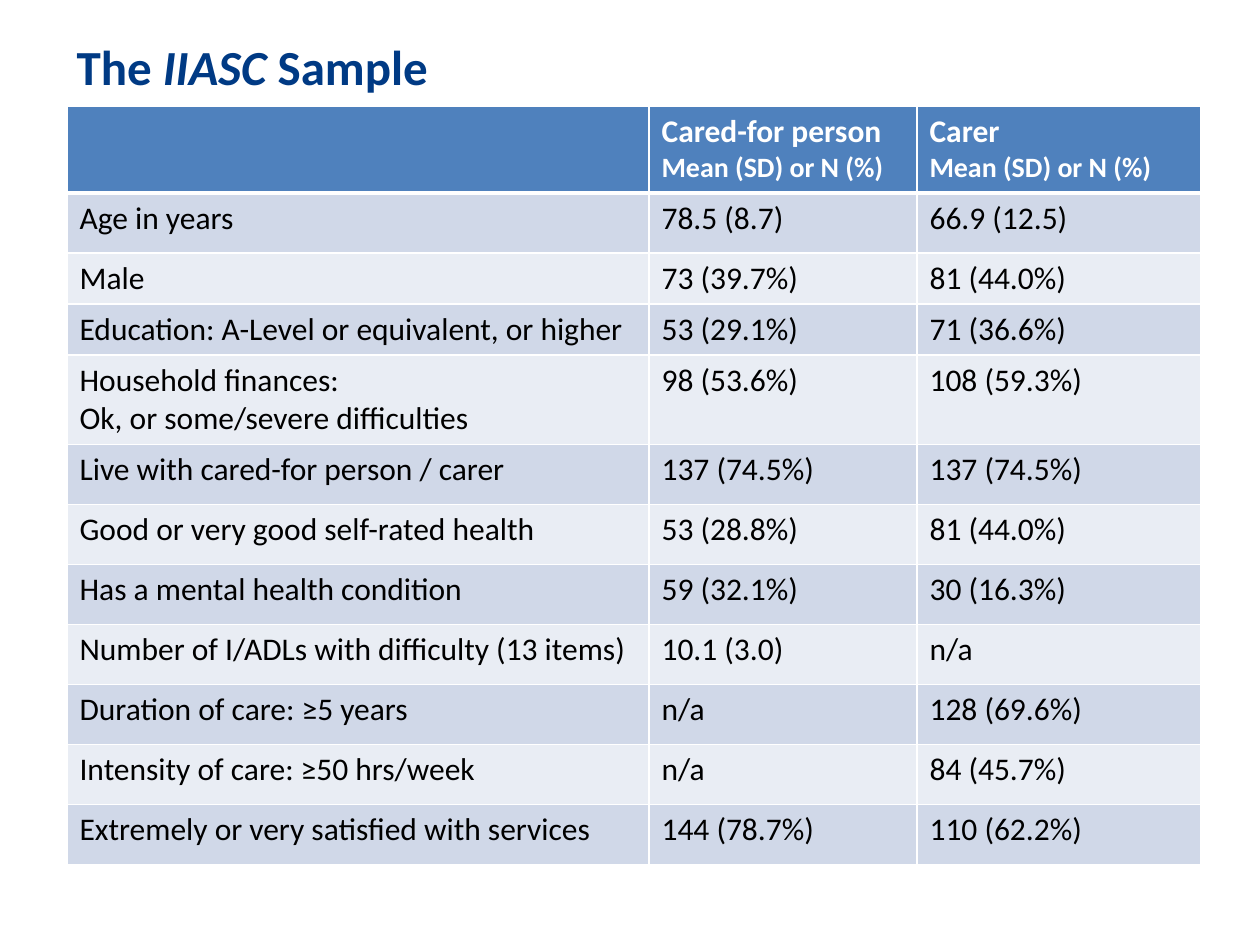
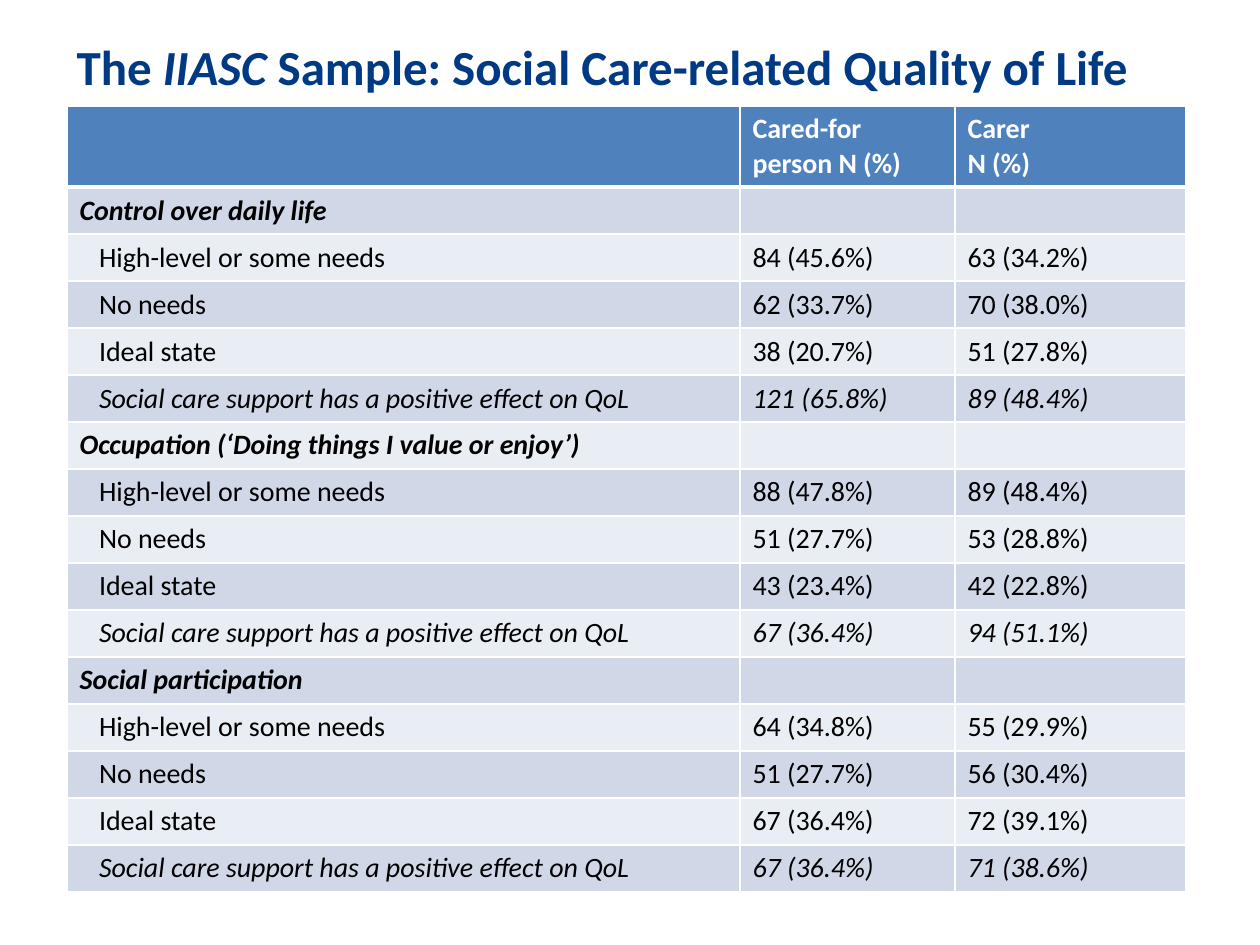
from dataclasses import dataclass
from itertools import chain

from lxml.etree import SubElement
from pptx import Presentation
from pptx.dml.color import RGBColor as Rgb
from pptx.enum.text import MSO_ANCHOR as Anchor, MSO_AUTO_SIZE as AutoSize, PP_ALIGN as Align
from pptx.oxml.ns import qn
from pptx.util import Emu, Pt

PX_PER_INCH = 126
EMU_PER_INCH = 914400
EMU_PER_POINT = 12700


@dataclass(frozen=True)
class Theme:
    font: str = "Calibri"
    title: str = "003A84"
    header: str = "4F81BD"
    bands: tuple[str, str] = ("D0D8E8", "E9EDF4")
    border: str = "FFFFFF"
    header_text: str = "FFFFFF"
    body_text: str = "000000"
    title_size: int = 28
    large: int = 18
    small: int = 16
    thin_line: int = 1
    header_line: int = 3


THEME = Theme()


@dataclass(frozen=True)
class Span:
    text: str
    size: int | None = None
    italic: bool | None = None


Line = tuple[Span, ...]


@dataclass(frozen=True)
class Row:
    cells: tuple[str | tuple[Line, ...], ...]
    height: int
    bold: bool = False
    italic: bool = False
    indent: int = 0


@dataclass(frozen=True)
class TableSlide:
    title: Line
    columns: tuple[int, ...]
    rows: tuple[Row, ...]
    text_size: int


@dataclass(frozen=True)
class Domain:
    """One quality-of-life domain: (cared-for person, carer) for each answer."""
    name: str
    values: tuple[tuple[str, str], ...]


ANSWERS = ("High-level or some needs", "No needs", "Ideal state")
SUPPORT_EFFECT = "Social care support has a positive effect on QoL"
DOMAIN_ROW_HEIGHT = 47
ANSWER_INDENT = 19
CELL_MARGIN = 13
TITLE_BOX = (64, 16, 1134, 100)
TABLE_LEFT, TABLE_TOP = 67, 106

UNITS = Span("Mean (SD) or N (%)", THEME.small)
SAMPLE = TableSlide(
    title=(Span("The "), Span("IIASC ", italic=True), Span("Sample")),
    columns=(582, 268, 284),
    text_size=THEME.large,
    rows=(
        Row(("", ((Span("Cared-for person "), UNITS),), ((Span("Carer"),), (UNITS,))),
            87, bold=True),
        Row(("Age in years", "78.5 (8.7)", "66.9 (12.5)"), 60),
        Row(("Male", "73 (39.7%)", "81 (44.0%)"), 51),
        Row(("Education: A-Level or equivalent, or higher", "53 (29.1%)", "71 (36.6%)"), 51),
        Row((((Span("Household finances:"),), (Span("Ok, or some/severe difficulties"),)),
             "98 (53.6%)", "108 (59.3%)"), 89),
        Row(("Live with cared-for person / carer", "137 (74.5%)", "137 (74.5%)"), 60),
        Row(("Good or very good self-rated health", "53 (28.8%)", "81 (44.0%)"), 60),
        Row(("Has a mental health condition", "59 (32.1%)", "30 (16.3%)"), 60),
        Row(("Number of I/ADLs with difficulty (13 items)", "10.1 (3.0)", "n/a"), 60),
        Row(("Duration of care: ≥5 years", "n/a", "128 (69.6%)"), 60),
        Row(("Intensity of care: ≥50 hrs/week", "n/a", "84 (45.7%)"), 60),
        Row(("Extremely or very satisfied with services", "144 (78.7%)", "110 (62.2%)"), 60),
    ),
)

DOMAINS = (
    Domain("Control over daily life", (
        ("84 (45.6%)", "63 (34.2%)"), ("62 (33.7%)", "70 (38.0%)"),
        ("38 (20.7%)", "51 (27.8%)"), ("121 (65.8%)", "89 (48.4%)"))),
    Domain("Occupation (‘Doing things I value or enjoy’)", (
        ("88 (47.8%)", "89 (48.4%)"), ("51 (27.7%)", "53 (28.8%)"),
        ("43 (23.4%)", "42 (22.8%)"), ("67 (36.4%)", "94 (51.1%)"))),
    Domain("Social participation", (
        ("64 (34.8%)", "55 (29.9%)"), ("51 (27.7%)", "56 (30.4%)"),
        ("67 (36.4%)", "72 (39.1%)"), ("67 (36.4%)", "71 (38.6%)"))),
)


def domain_rows(domain: Domain) -> list[Row]:
    heading = Row((domain.name, "", ""), DOMAIN_ROW_HEIGHT, bold=True, italic=True)
    answers = [
        Row((label, *values), DOMAIN_ROW_HEIGHT,
            italic=label == SUPPORT_EFFECT, indent=ANSWER_INDENT)
        for label, values in zip((*ANSWERS, SUPPORT_EFFECT), domain.values)
    ]
    return [heading, *answers]


QUALITY_OF_LIFE = TableSlide(
    title=(Span("The "), Span("IIASC ", italic=True),
           Span("Sample: Social Care-related Quality of Life")),
    columns=(673, 215, 231),
    text_size=THEME.small,
    rows=(
        Row(("", "Cared-for person N (%)", ((Span("Carer"),), (Span("N (%)"),))),
            79, bold=True),
        *chain.from_iterable(map(domain_rows, DOMAINS)),
    ),
)


def px(length: int) -> Emu:
    return Emu(round(length * EMU_PER_INCH / PX_PER_INCH))


def write_line(para, line: Line, size: int, color: str, bold: bool, italic: bool = False) -> None:
    font = para.font
    font.name, font.size, font.bold, font.italic = THEME.font, Pt(size), bold, italic
    font.color.rgb = Rgb.from_string(color)
    for span in line:
        run = para.add_run()
        run.text = span.text
        if span.size:
            run.font.size = Pt(span.size)
        if span.italic is not None:
            run.font.italic = span.italic
    if not line:
        SubElement(para._p, qn("a:endParaRPr"), sz=str(size * 100))


def add_title(page, line: Line) -> None:
    title = page.shapes.title
    title.left, title.top, title.width, title.height = map(px, TITLE_BOX)
    frame = title.text_frame
    frame.word_wrap = True
    frame.auto_size = AutoSize.NONE
    frame.vertical_anchor = Anchor.MIDDLE
    para = frame.paragraphs[0]
    para.alignment = Align.LEFT
    write_line(para, line, THEME.title_size, THEME.title, bold=True)


def set_borders(cell, row_index: int) -> None:
    """Thin lines all round, with a heavy one between header and body."""
    heavy_side = {0: "lnB", 1: "lnT"}.get(row_index)
    properties = cell._tc.get_or_add_tcPr()
    for side in ("lnL", "lnR", "lnT", "lnB"):
        points = THEME.header_line if side == heavy_side else THEME.thin_line
        edge = SubElement(properties, qn(f"a:{side}"), w=str(points * EMU_PER_POINT))
        fill = SubElement(edge, qn("a:solidFill"))
        SubElement(fill, qn("a:srgbClr"), val=THEME.border)


def fill_cell(cell, content: str | tuple[Line, ...], row: Row, row_index: int, size: int) -> None:
    is_header = row_index == 0
    set_borders(cell, row_index)
    cell.fill.solid()
    band = THEME.header if is_header else THEME.bands[(row_index - 1) % 2]
    cell.fill.fore_color.rgb = Rgb.from_string(band)
    color = THEME.header_text if is_header else THEME.body_text
    if isinstance(content, str):
        content = ((Span(content),) if content else (),)
    frame = cell.text_frame
    for index, line in enumerate(content):
        para = frame.add_paragraph() if index else frame.paragraphs[0]
        write_line(para, line, size, color, row.bold, row.italic)


def add_sample_table(page, content: TableSlide) -> None:
    rows, columns = content.rows, content.columns
    table = page.shapes.add_table(
        len(rows), len(columns), px(TABLE_LEFT), px(TABLE_TOP),
        px(sum(columns)), px(sum(row.height for row in rows))).table
    for column, width in zip(table.columns, columns):
        column.width = px(width)
    for row_index, row in enumerate(rows):
        table.rows[row_index].height = px(row.height)
        for column_index, text in enumerate(row.cells):
            fill_cell(table.cell(row_index, column_index), text, row, row_index,
                      content.text_size)
        if row.indent:
            table.cell(row_index, 0).margin_left = px(CELL_MARGIN + row.indent)


def main() -> None:
    deck = Presentation()
    deck.slide_width, deck.slide_height = px(1260), px(945)
    title_only = deck.slide_layouts[5]
    for content in (SAMPLE, QUALITY_OF_LIFE):
        page = deck.slides.add_slide(title_only)
        add_title(page, content.title)
        add_sample_table(page, content)
    deck.save("out.pptx")


if __name__ == "__main__":
    main()
